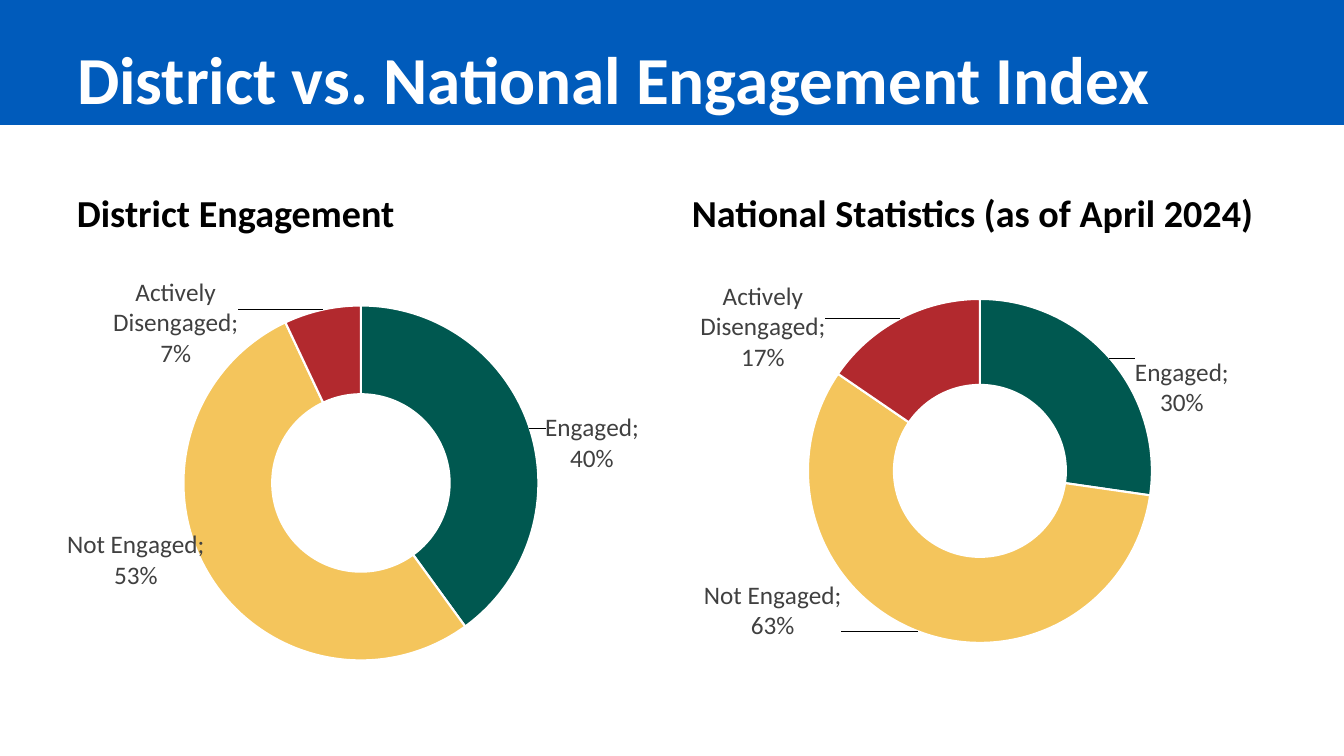
from dataclasses import dataclass
from math import cos, pi, sin

from pptx import Presentation
from pptx.chart.data import CategoryChartData
from pptx.dml.color import RGBColor
from pptx.enum.chart import XL_CHART_TYPE
from pptx.enum.shapes import MSO_SHAPE
from pptx.enum.text import MSO_ANCHOR, MSO_AUTO_SIZE, PP_ALIGN
from pptx.oxml import parse_xml
from pptx.oxml.ns import nsdecls, qn
from pptx.util import Emu, Pt

DOUGHNUT = XL_CHART_TYPE.DOUGHNUT
RECTANGLE = MSO_SHAPE.RECTANGLE
MIDDLE, BOTTOM = MSO_ANCHOR.MIDDLE, MSO_ANCHOR.BOTTOM
LEFT = PP_ALIGN.LEFT
NO_AUTOFIT = MSO_AUTO_SIZE.NONE
TITLE_ONLY = 5
EMU_PER_PX = 914400 / 100.8


@dataclass(frozen=True)
class Theme:
    font: str = "Calibri"
    band: str = "005BBB"
    white: str = "FFFFFF"
    heading: str = "000000"
    label: str = "404040"
    slices: tuple = ("005850", "F4C55C", "B2292E")
    title_size: float = 48
    heading_size: float = 27.2
    label_size: float = 18
    slice_border: float = 1.5


def px(length):
    return Emu(round(length * EMU_PER_PX))


def style_font(font, theme, size, color, bold=False):
    font.name = theme.font
    font.size = Pt(size)
    font.bold = bold
    font.color.rgb = RGBColor.from_string(color)


def write_text(frame, text, *, theme, size, color, anchor, bold=True):
    frame.word_wrap = True
    frame.auto_size = NO_AUTOFIT
    frame.vertical_anchor = anchor
    para = frame.paragraphs[0]
    para.alignment = LEFT
    span = para.add_run()
    span.text = text
    style_font(span.font, theme, size, color, bold)


def manual_layout(**values):
    items = "".join(f'<c:{name} val="{value}"/>' for name, value in values.items())
    return f"<c:layout><c:manualLayout>{items}</c:manualLayout></c:layout>"


def point_label(index, shift_x, shift_y):
    return parse_xml(
        f'<c:dLbl {nsdecls("c")}><c:idx val="{index}"/>'
        f"{manual_layout(x=shift_x, y=shift_y)}"
        '<c:showLegendKey val="0"/><c:showVal val="1"/><c:showCatName val="1"/>'
        '<c:showSerName val="0"/><c:showPercent val="0"/><c:showBubbleSize val="0"/>'
        "<c:separator>; </c:separator></c:dLbl>"
    )


class SlideBuilder:
    def __init__(self, page, theme):
        self.page = page
        self.theme = theme

    def band(self, left, top, width, height):
        shape = self.page.shapes.add_shape(RECTANGLE, px(left), px(top), px(width), px(height))
        shape.shadow.inherit = False
        shape.fill.solid()
        shape.fill.fore_color.rgb = RGBColor.from_string(self.theme.band)
        shape.line.fill.background()
        self.page.shapes.element.insert(2, shape.element)

    def title(self, text, left, top, width, height):
        title = self.page.shapes.title
        title.left, title.top, title.width, title.height = map(px, (left, top, width, height))
        write_text(title.text_frame, text, theme=self.theme, size=self.theme.title_size,
                   color=self.theme.white, anchor=MIDDLE)

    def heading(self, text, left, top, width, height):
        box = self.page.shapes.add_textbox(px(left), px(top), px(width), px(height))
        write_text(box.text_frame, text, theme=self.theme, size=self.theme.heading_size,
                   color=self.theme.heading, anchor=BOTTOM)

    def doughnut(self, categories, values, frame, ring, label_centres):
        left, top, width, height = frame
        data = CategoryChartData(number_format="0%")
        data.categories = categories
        data.add_series("Series 1", values)
        chart = self.page.shapes.add_chart(DOUGHNUT, *map(px, frame), data).chart
        chart.has_title = False
        chart.has_legend = False
        style_font(chart.font, self.theme, 10, self.theme.heading)
        plot = chart.plots[0]
        plot.vary_by_categories = True
        series = plot.series[0]
        for index, color in enumerate(self.theme.slices):
            slice_format = series.points[index].format
            slice_format.fill.solid()
            slice_format.fill.fore_color.rgb = RGBColor.from_string(color)
            slice_format.line.color.rgb = RGBColor.from_string(self.theme.white)
            slice_format.line.width = Pt(self.theme.slice_border)
        self.place_ring(chart, frame, ring)

        labels = series.data_labels
        labels.show_value = True
        labels.show_category_name = True
        labels.number_format = "0%"
        labels.number_format_is_linked = False
        style_font(labels.font, self.theme, self.theme.label_size, self.theme.label)
        label_list = series.points[0].data_label and chart.element.find(".//" + qn("c:dLbls"))
        centre_x, centre_y, diameter = ring
        middle_radius = diameter * 3 / 8
        before = 0
        for index, (value, (label_x, label_y)) in enumerate(zip(values, label_centres)):
            angle = 2 * pi * (before + value / 2) / sum(values)
            shift_x = label_x - centre_x - middle_radius * sin(angle)
            shift_y = label_y - centre_y + middle_radius * cos(angle)
            label_list.insert(index, point_label(index, round(shift_x / width, 3),
                                                 round(shift_y / height, 3)))
            before += value

    def place_ring(self, chart, frame, ring):
        left, top, width, height = frame
        centre_x, centre_y, diameter = ring
        area = chart.element.find(".//" + qn("c:plotArea"))
        for layout in area.findall(qn("c:layout")):
            area.remove(layout)
        layout = manual_layout(
            layoutTarget="inner", xMode="edge", yMode="edge",
            x=round((centre_x - diameter / 2 - left) / width, 4),
            y=round((centre_y - diameter / 2 - top) / height, 4),
            w=round(diameter / width, 4), h=round(diameter / height, 4),
        )
        area.insert(0, parse_xml(layout.replace("<c:layout>", f'<c:layout {nsdecls("c")}>', 1)))


def main():
    deck = Presentation()
    deck.slide_width, deck.slide_height = px(1344), px(756)
    page = deck.slides.add_slide(deck.slide_layouts[TITLE_ONLY])
    builder = SlideBuilder(page, Theme())
    builder.band(0, -1, 1344, 126)
    builder.title("District vs. National Engagement Index", 67, 30, 1210, 95)

    categories = ("Engaged", "Not Engaged", "Actively Disengaged")
    panels = (
        ("District Engagement", 67, (0.4, 0.53, 0.07), (361, 483, 355),
         ((592, 443), (136, 560), (176, 323))),
        ("National Statistics (as of April 2024)", 682, (0.3, 0.63, 0.17), (980, 471, 344),
         ((1182, 388), (773, 611), (763, 327))),
    )
    for heading, left, values, ring, label_centres in panels:
        builder.heading(heading, left, 169, 594, 71)
        builder.doughnut(categories, values, (left, 240, 594, 435), ring, label_centres)
    deck.save("out.pptx")


if __name__ == "__main__":
    main()
